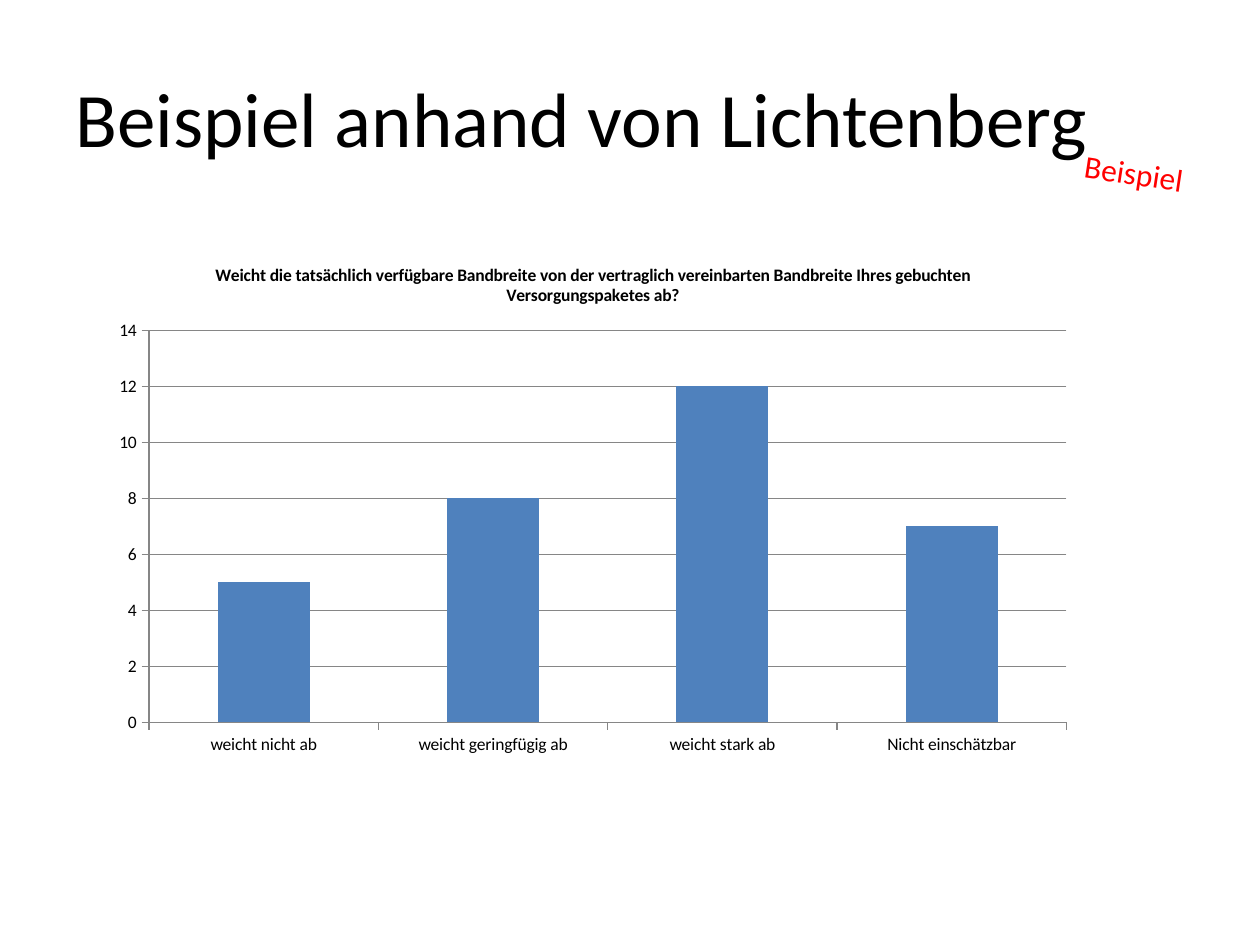
from pptx import Presentation
from pptx.chart.data import CategoryChartData
from pptx.dml.color import RGBColor
from pptx.enum.chart import XL_CHART_TYPE, XL_TICK_MARK
from pptx.enum.text import MSO_ANCHOR, MSO_AUTO_SIZE, PP_ALIGN
from pptx.util import Inches, Pt

BLACK = RGBColor(0x00, 0x00, 0x00)
RED = RGBColor(0xFF, 0x00, 0x00)
BLUE = RGBColor(0x4F, 0x81, 0xBD)
GRAY = RGBColor(0x86, 0x86, 0x86)


def format_font(font, size, color, bold=False):
    values = {"name": "Calibri", "size": Pt(size), "bold": bold}
    for name, value in values.items():
        setattr(font, name, value)
    font.color.rgb = color


deck = Presentation()
deck.slide_width, deck.slide_height = Inches(10), Inches(7.5)
page = deck.slides.add_slide(deck.slide_layouts[5])

title = page.shapes.title
title_place = {"left": 0.5, "top": 0.3, "width": 9, "height": 1.25}
for name, value in title_place.items():
    setattr(title, name, Inches(value))
title.text_frame.vertical_anchor = MSO_ANCHOR.MIDDLE
para = title.text_frame.paragraphs[0]
para.alignment = PP_ALIGN.LEFT
span = para.add_run()
span.text = "Beispiel anhand von Lichtenberg"
format_font(span.font, 44, BLACK)

box = page.shapes.add_textbox(Inches(8.33), Inches(1.17), Inches(1.34), Inches(0.4))
box.rotation = 8.6
box.text_frame.word_wrap = True
box.text_frame.auto_size = MSO_AUTO_SIZE.SHAPE_TO_FIT_TEXT
para = box.text_frame.paragraphs[0]
para.alignment = PP_ALIGN.CENTER
span = para.add_run()
span.text = "Beispiel"
format_font(span.font, 18, RED)

data = CategoryChartData()
data.categories = ["weicht nicht ab", "weicht geringfügig ab", "weicht stark ab", "Nicht einschätzbar"]
data.add_series("Series 1", [5, 8, 12, 7])
chart = page.shapes.add_chart(
    XL_CHART_TYPE.COLUMN_CLUSTERED, Inches(0.79), Inches(1.93), Inches(7.83), Inches(4.14), data
).chart
format_font(chart.font, 10, BLACK)
chart.has_legend = False
chart.has_title = True
para = chart.chart_title.text_frame.paragraphs[0]
span = para.add_run()
span.text = (
    "Weicht die tatsächlich verfügbare Bandbreite von der vertraglich "
    "vereinbarten Bandbreite Ihres gebuchten Versorgungspaketes ab?"
)
format_font(span.font, 10, BLACK, bold=True)
chart.chart_title.include_in_layout = False

plot = chart.plots[0]
plot.gap_width = 150
plot.vary_by_categories = False
bars = plot.series[0]
bars.format.fill.solid()
bars.format.fill.fore_color.rgb = BLUE

for axis in (chart.category_axis, chart.value_axis):
    axis.major_tick_mark = XL_TICK_MARK.OUTSIDE
    axis.minor_tick_mark = XL_TICK_MARK.NONE
    axis.format.line.color.rgb = GRAY
    axis.format.line.width = Pt(0.75)
    format_font(axis.tick_labels.font, 10, BLACK)

scale = {"minimum_scale": 0, "maximum_scale": 14, "major_unit": 2, "has_major_gridlines": True}
for name, value in scale.items():
    setattr(chart.value_axis, name, value)
grid_line = chart.value_axis.major_gridlines.format.line
grid_line.color.rgb = GRAY
grid_line.width = Pt(0.75)

deck.save("out.pptx")
